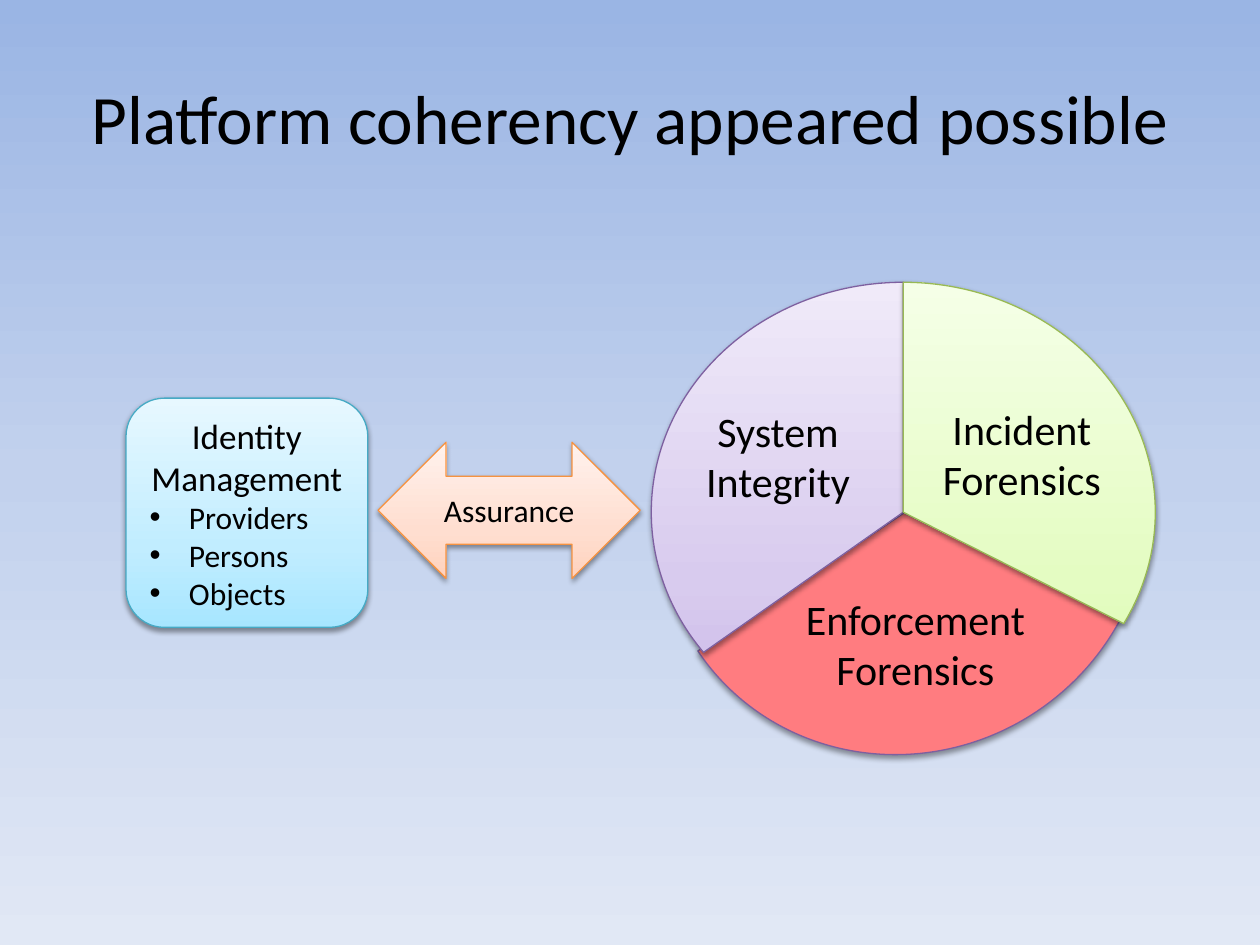
from dataclasses import dataclass

from lxml.etree import SubElement
from pptx import Presentation
from pptx.dml.color import RGBColor as RGB
from pptx.dml.fill import FillFormat as Fill
from pptx.enum.shapes import MSO_SHAPE as Kind
from pptx.enum.text import MSO_ANCHOR as Anchor, MSO_AUTO_SIZE as Auto, PP_ALIGN as Align
from pptx.oxml.ns import qn
from pptx.shapes.autoshape import Shape
from pptx.text.text import TextFrame as Frame
from pptx.util import Pt

FONT = "Calibri"
HEX = {
    "text": "000000", "shade": "000000",
    "red": "FF7C80", "violet": "7D60A0", "green": "98B955",
    "teal": "46AAC5", "orange": "F69240",
}
# Stops at each percentage along the fade
FADES = {
    "sky": {0: "9AB5E4", 50: "C2D1ED", 100: "E1E8F5"},
    "aqua": {0: "A7E6FF", 35: "C1EDFF", 100: "E7F8FF"},
    "lilac": {0: "C9B5E8", 35: "D8CBEE", 100: "F0EAF9"},
    "lime": {0: "DAFDA7", 35: "E4FCC2", 100: "F5FFE7"},
    "peach": {0: "FFD2BD", 35: "FFDED0", 100: "FFF2ED"},
}


@dataclass
class Box:
    left: float
    top: float
    width: float
    height: float

    def lengths(self) -> list:
        return [Pt(n) for n in (self.left, self.top, self.width, self.height)]


@dataclass
class Slice:
    box: Box
    start: float  # degrees, running clockwise up to twelve o'clock
    fill: str
    line: str
    turn: float = 0
    flip: bool = False


@dataclass
class Label:
    box: Box
    lines: tuple
    broken: bool = False  # one paragraph with line breaks


WHEEL = Box(372.2, 161.3, 288, 262.8)
SLICES = [
    Slice(Box(380.2, 151.2, 272.9, 283.7), 150.07, "red", "violet", turn=236.2),
    Slice(WHEEL, 144.94, "lilac", "violet"),
    Slice(WHEEL, 153.19, "lime", "green", flip=True),
]
LABELS = [
    Label(Box(434.9, 335.5, 176.4, 65.5), ("Enforcement", "Forensics"), broken=True),
    Label(Box(385.2, 228.2, 118.8, 65.5), ("System", "Integrity")),
    Label(Box(514.1, 226.8, 139.7, 65.5), ("Incident", "Forensics")),
]


def fade(fill: Fill, root, name: str, angle: float) -> None:
    """Fill with a three-stop gradient; root holds the fill's XML."""
    fill.gradient()
    fill.gradient_angle = angle
    stops = root.find(".//" + qn("a:gsLst"))
    for old in list(stops):
        stops.remove(old)
    for place, tint in FADES[name].items():
        stop = SubElement(stops, qn("a:gs"), pos=str(place * 1000))
        SubElement(stop, qn("a:srgbClr"), val=tint)


def shade(shape: Shape) -> None:
    """Drop a soft shadow straight down."""
    shape.shadow.inherit = False
    effects = shape.element.spPr.find(qn("a:effectLst"))
    drop = SubElement(effects, qn("a:outerShdw"), blurRad=str(Pt(3.1)),
                      dist=str(Pt(1.6)), dir=str(90 * 60000), rotWithShape="0")
    tint = SubElement(drop, qn("a:srgbClr"), val=HEX["shade"])
    SubElement(tint, qn("a:alpha"), val="38000")


def draw(shapes, kind: Kind, box: Box, fill: str, line: str) -> Shape:
    shape = shapes.add_shape(kind, *box.lengths())
    if fill in FADES:
        fade(shape.fill, shape.element, fill, 90)
    else:
        shape.fill.solid()
        shape.fill.fore_color.rgb = RGB.from_string(HEX[fill])
    shape.line.color.rgb = RGB.from_string(HEX[line])
    shape.line.width = Pt(0.75)
    shade(shape)
    return shape


def write(para, text: str, size: float, align: Align = Align.CENTER) -> None:
    para.alignment = align
    run = para.add_run()
    run.text = text
    run.font.name, run.font.size = FONT, Pt(size)
    run.font.color.rgb = RGB.from_string(HEX["text"])


def bullet(frame: Frame, text: str) -> None:
    para = frame.add_paragraph()
    write(para, text, 18, Align.LEFT)
    props = para._p.get_or_add_pPr()
    props.set("marL", str(Pt(22.5)))
    props.set("indent", str(Pt(-22.5)))
    SubElement(props, qn("a:buFont"), typeface="Arial")
    SubElement(props, qn("a:buChar"), char="•")


def carve(shapes, part: Slice) -> None:
    pie = draw(shapes, Kind.PIE, part.box, part.fill, part.line)
    # Angles are kept in 60000ths of a degree, adjustments in 100000ths
    for i, angle in enumerate((part.start, 270)):
        pie.adjustments[i] = angle * 0.6
    pie.rotation = part.turn
    if part.flip:
        pie.element.spPr.find(qn("a:xfrm")).set("flipH", "1")


def tag(shapes, label: Label) -> None:
    frame = shapes.add_textbox(*label.box.lengths()).text_frame
    frame.word_wrap = True
    frame.auto_size = Auto.SHAPE_TO_FIT_TEXT
    para = frame.paragraphs[0]
    for i, line in enumerate(label.lines):
        if i and label.broken:
            para.add_line_break()
        elif i:
            para = frame.add_paragraph()
        write(para, line, 24)


def main() -> None:
    deck = Presentation()
    deck.slide_width, deck.slide_height = Pt(720), Pt(540)
    slide = deck.slides.add_slide(deck.slide_layouts[5])
    fade(slide.background.fill, slide.element, "sky", 270)
    shapes = slide.shapes

    title = shapes.title
    title.left, title.top, title.width, title.height = Box(36, 21.6, 648, 90).lengths()
    title.text_frame.vertical_anchor = Anchor.MIDDLE
    write(title.text_frame.paragraphs[0], "Platform coherency appeared possible", 39.6)

    card = draw(shapes, Kind.ROUNDED_RECTANGLE, Box(72, 227.5, 138.2, 131), "aqua", "teal")
    frame = card.text_frame
    frame.vertical_anchor = Anchor.MIDDLE
    write(frame.paragraphs[0], "Identity Management", 20)
    for item in ("Providers", "Persons", "Objects"):
        bullet(frame, item)

    wheel = shapes.add_group_shape().shapes
    for part in SLICES:
        carve(wheel, part)
    for label in LABELS:
        tag(wheel, label)

    arrow = draw(shapes, Kind.LEFT_RIGHT_ARROW, Box(216, 252.7, 149.8, 77.8), "peach", "orange")
    arrow.text_frame.vertical_anchor = Anchor.MIDDLE
    write(arrow.text_frame.paragraphs[0], "Assurance", 18)

    deck.save("out.pptx")


if __name__ == "__main__":
    main()
